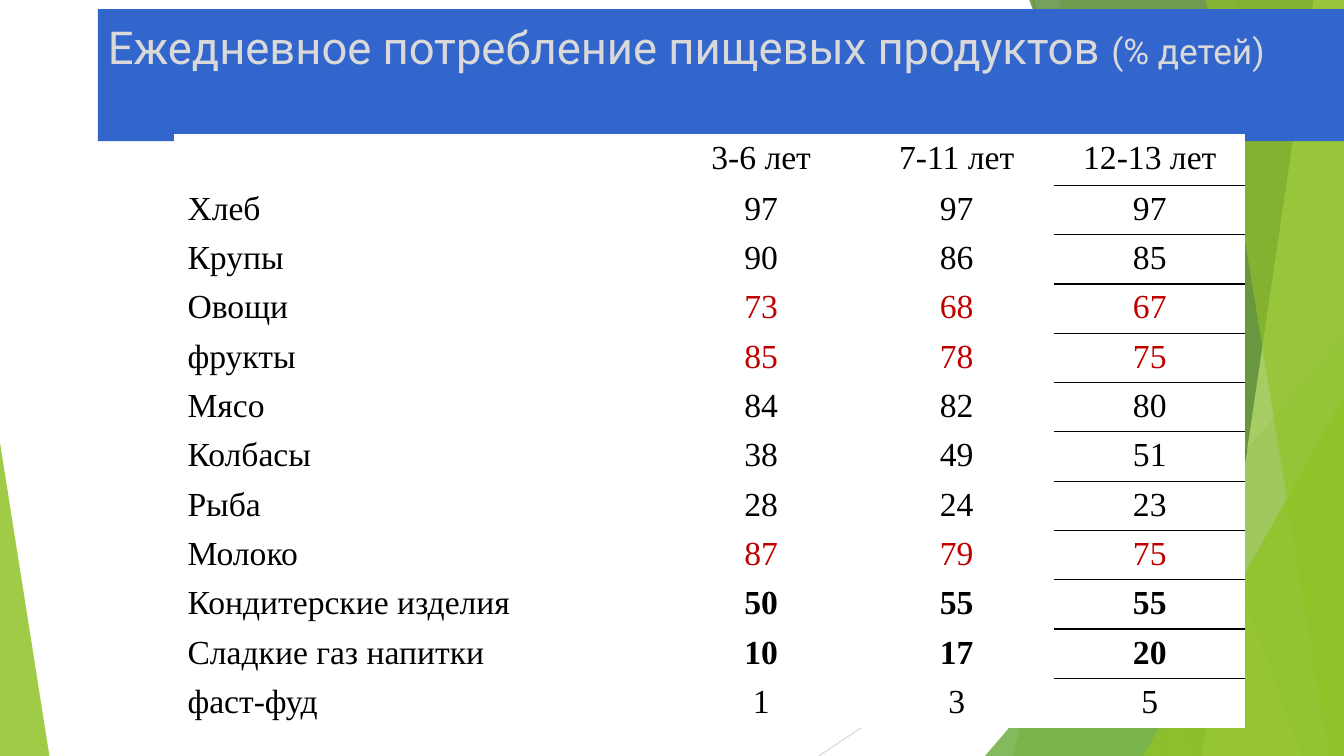
from dataclasses import dataclass

from lxml.etree import SubElement
from pptx import Presentation
from pptx.dml.color import RGBColor
from pptx.enum.shapes import MSO_CONNECTOR, MSO_SHAPE
from pptx.enum.text import MSO_ANCHOR, PP_ALIGN
from pptx.oxml import parse_xml
from pptx.oxml.ns import nsdecls, qn
from pptx.util import Inches, Pt

WIDTH, HEIGHT = Inches(13.33), Inches(7.5)


@dataclass(frozen=True)
class Theme:
    green: str = "90C226"
    leaf: str = "54A021"
    forest: str = "3F7819"
    lime: str = "C0E474"
    band: str = "3366CC"
    pale: str = "D9D9D9"
    grey: str = "BFBFBF"
    paper: str = "FFFFFF"
    ink: str = "000000"
    alert: str = "C00000"
    title_font: str = "Roboto"
    table_font: str = "Times New Roman"
    title_size: float = 32.4
    unit_size: float = 25.2
    table_size: float = 24
    hairline: float = 0.75
    rule: float = 1


THEME = Theme()

AGES = ["", "3-6 лет", "7-11 лет", "12-13 лет"]
FOODS = [
    ("Хлеб", 97, 97, 97),
    ("Крупы", 90, 86, 85),
    ("Овощи", 73, 68, 67),
    ("фрукты", 85, 78, 75),
    ("Мясо", 84, 82, 80),
    ("Колбасы", 38, 49, 51),
    ("Рыба", 28, 24, 23),
    ("Молоко", 87, 79, 75),
    ("Кондитерские изделия", 50, 55, 55),
    ("Сладкие газ напитки", 10, 17, 20),
    ("фаст-фуд", 1, 3, 5),
]
RED_FOODS = {"Овощи", "фрукты", "Молоко"}
BOLD_FOODS = {"Кондитерские изделия", "Сладкие газ напитки"}


def across(percent):
    return round(WIDTH * percent / 100)


def down(percent):
    return round(HEIGHT * percent / 100)


def paint(shape, color, opacity=100):
    shape.shadow.inherit = False
    shape.line.fill.background()
    shape.fill.solid()
    shape.fill.fore_color.rgb = RGBColor.from_string(color)
    if opacity < 100:
        tint = shape.fill._xPr.find(".//" + qn("a:srgbClr"))
        SubElement(tint, qn("a:alpha"), val=str(opacity * 1000))


def add_ray(slide, start, end, color):
    ray = slide.shapes.add_connector(
        MSO_CONNECTOR.STRAIGHT, across(start[0]), down(start[1]), across(end[0]), down(end[1]))
    ray.line.color.rgb = RGBColor.from_string(color)
    ray.line.width = Pt(THEME.hairline)
    SubElement(ray._element.spPr, qn("a:effectLst"))


def add_facet(slide, top, bottom, color, opacity):
    """Full-height facet between a slanted left side and the slide's right edge."""
    outline = slide.shapes.build_freeform(across(top), 0)
    outline.add_line_segments(
        [(WIDTH, 0), (WIDTH, HEIGHT), (across(bottom), HEIGHT)], close=True)
    paint(outline.convert_to_shape(), color, opacity)


def add_corner(slide, left, top, width, apex, color, opacity):
    """Triangle standing on the slide's bottom edge."""
    corner = slide.shapes.add_shape(
        MSO_SHAPE.ISOSCELES_TRIANGLE, across(left), down(top), across(width), down(100 - top))
    corner.adjustments[0] = apex
    paint(corner, color, opacity)


def add_run(paragraph, text, font, size, color, bold=False):
    run = paragraph.add_run()
    run.text = text
    run.font.name = font
    run.font.size = Pt(size)
    run.font.bold = bold
    run.font.color.rgb = RGBColor.from_string(color)


def add_title(slide):
    band = slide.shapes.add_shape(
        MSO_SHAPE.RECTANGLE, across(7.28), down(1.2), across(92.72), down(17.47))
    paint(band, THEME.band)
    frame = band.text_frame
    frame.word_wrap = True
    frame.vertical_anchor = MSO_ANCHOR.TOP
    frame.margin_top = Inches(0.1)
    heading = frame.paragraphs[0]
    heading.alignment = PP_ALIGN.LEFT
    add_run(heading, "Ежедневное потребление пищевых продуктов ",
            THEME.title_font, THEME.title_size, THEME.pale)
    add_run(heading, "(% детей)", THEME.title_font, THEME.unit_size, THEME.pale)


def set_borders(cell, ruled):
    """Rule the named sides (L, R, T, B) and leave the others bare."""
    for place, side in enumerate("LRTB"):
        if side in ruled:
            stroke = f'<a:solidFill><a:srgbClr val="{THEME.ink}"/></a:solidFill>'
        else:
            stroke = "<a:noFill/>"
        border = parse_xml(
            f'<a:ln{side} {nsdecls("a")} w="{Pt(THEME.rule)}">{stroke}</a:ln{side}>')
        cell._tc.get_or_add_tcPr().insert(place, border)


def fill_cell(cell, text, centered, color, bold, ruled):
    cell.fill.solid()
    cell.fill.fore_color.rgb = RGBColor.from_string(THEME.paper)
    cell.margin_left = cell.margin_right = Inches(0.13)
    cell.margin_top = cell.margin_bottom = Inches(0.05)
    set_borders(cell, ruled)
    entry = cell.text_frame.paragraphs[0]
    entry.alignment = PP_ALIGN.CENTER if centered else PP_ALIGN.LEFT
    if text:
        add_run(entry, text, THEME.table_font, THEME.table_size, color, bold)
    else:
        entry.font.size = Pt(THEME.table_size)


def add_consumption_table(slide):
    widths = [36.38, 14.55, 14.55, 14.18]
    heights = [6.8] + [6.52] * len(FOODS)
    table = slide.shapes.add_table(
        len(heights), len(widths), across(12.98), down(17.73),
        across(sum(widths)), down(sum(heights))).table
    table.first_row = table.horz_banding = False
    for column, width in zip(table.columns, widths):
        column.width = across(width)
    for row, height in zip(table.rows, heights):
        row.height = down(height)

    for r, record in enumerate([AGES, *FOODS]):
        food = record[0]
        for c, value in enumerate(record):
            is_number = c > 0
            # Only the last age group has rules between its rows
            ruled = ""
            if c == len(widths) - 1:
                ruled = ("T" if r > 0 else "") + ("B" if r < len(FOODS) else "")
            fill_cell(table.cell(r, c), str(value), is_number,
                      THEME.alert if is_number and food in RED_FOODS else THEME.ink,
                      is_number and food in BOLD_FOODS, ruled)


def main():
    deck = Presentation()
    deck.slide_width, deck.slide_height = WIDTH, HEIGHT
    slide = deck.slides.add_slide(deck.slide_layouts[6])

    # Green backdrop, from back to front
    add_ray(slide, (76.89, 0), (86.87, 100), THEME.grey)
    add_ray(slide, (100, 53.73), (60.92, 100), THEME.pale)
    add_facet(slide, 92.12, 75.32, THEME.green, 30)
    add_facet(slide, 78.77, 88.75, THEME.green, 20)
    add_corner(slide, 73.29, 44.4, 26.71, 1, THEME.leaf, 72)
    add_facet(slide, 76.59, 96.85, THEME.forest, 70)
    add_facet(slide, 97.75, 89.42, THEME.lime, 70)
    add_facet(slide, 89.72, 98.87, THEME.green, 65)
    add_corner(slide, 85.07, 52.4, 14.93, 1, THEME.green, 80)
    add_corner(slide, 0, 58.53, 3.68, 0, THEME.green, 85)

    # Heading and data
    add_title(slide)
    add_consumption_table(slide)
    deck.save("out.pptx")


if __name__ == "__main__":
    main()
